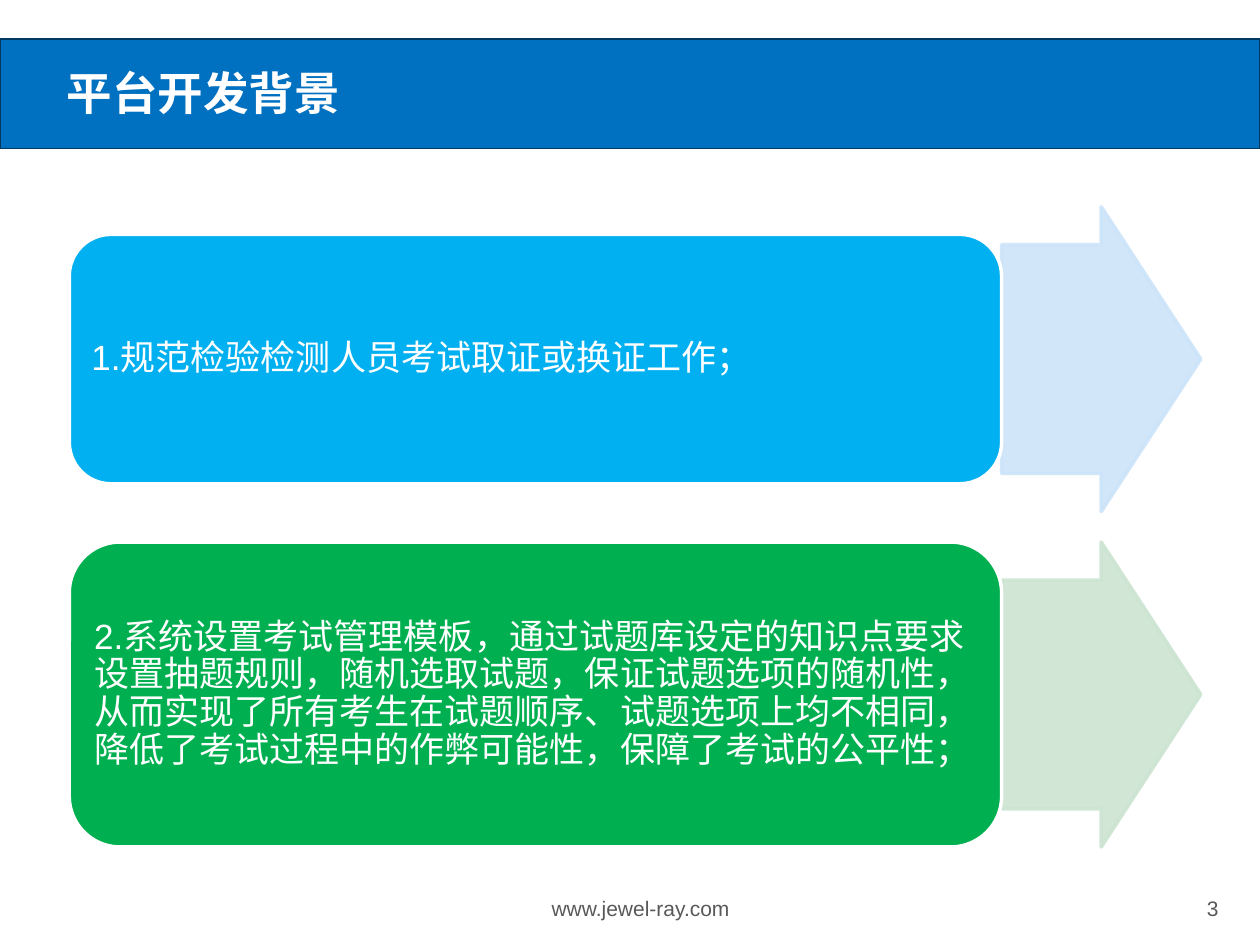
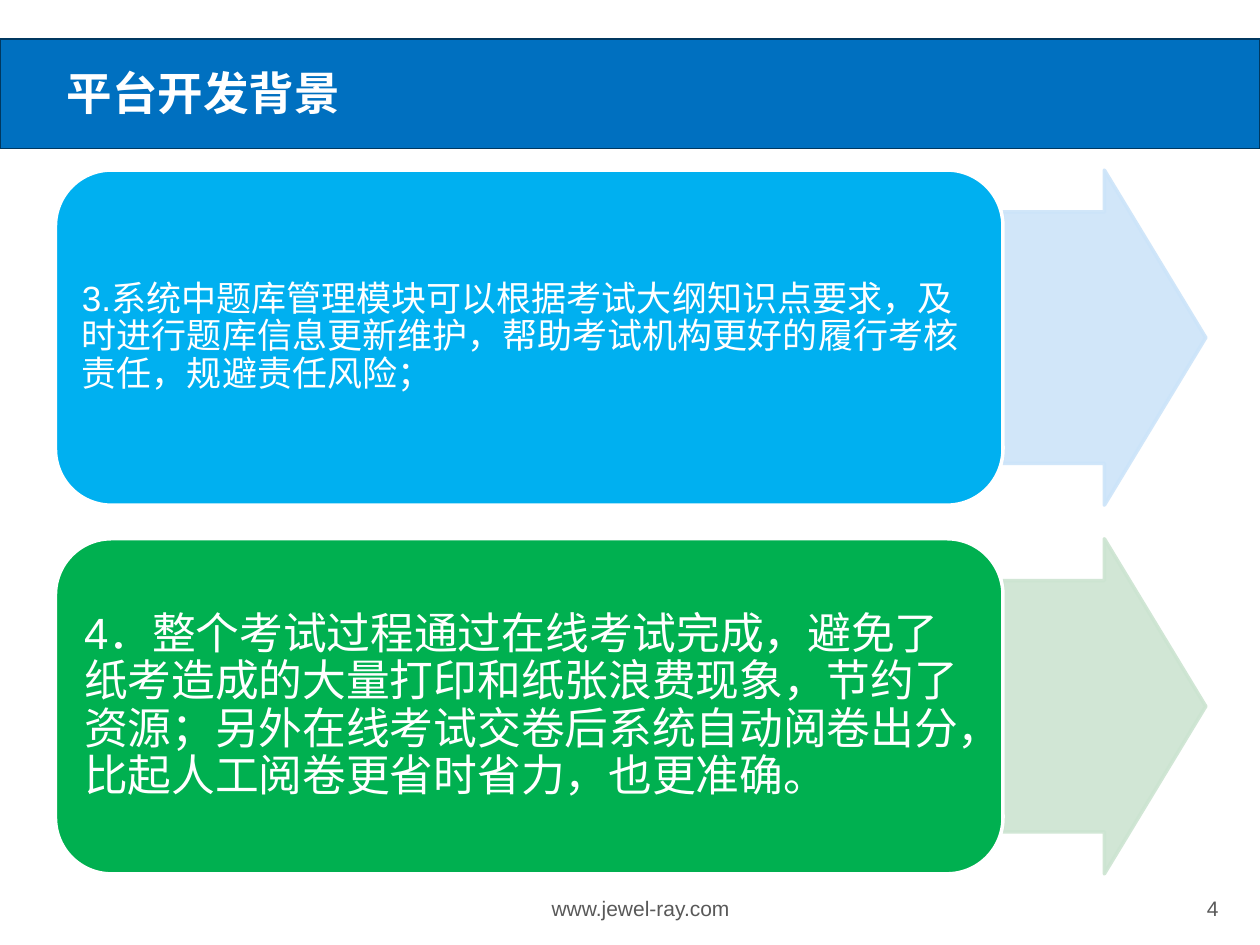
from typing import NamedTuple

from lxml import etree
from pptx import Presentation
from pptx import util as u
from pptx.dml.color import RGBColor
from pptx.enum import lang, shapes, text
from pptx.oxml import ns

# The slide is a grid of 100 columns by 75 rows of square cells.
CELL = u.Inches(0.1)
COLUMNS, ROWS = 100, 75

WHITE = RGBColor(0xFF, 0xFF, 0xFF)
BAND_BLUE = RGBColor(0x00, 0x70, 0xC0)
BAND_EDGE = RGBColor(0x00, 0x38, 0x60)
FOOTER_GREY = RGBColor(0x59, 0x59, 0x59)
CARD_BLUE = RGBColor(0x00, 0xB0, 0xF0)
CARD_GREEN = RGBColor(0x00, 0xB0, 0x50)
ARROW_BLUE = RGBColor(0xCC, 0xE4, 0xF9)
ARROW_GREEN = RGBColor(0xCC, 0xE4, 0xD1)

LATIN_FONT = "Arial"
CHINESE_FONT = "Noto Sans CJK SC"
TITLE = "平台开发背景"
WEBSITE = "www.jewel-ray.com"
FIRST_NUMBER = 3
ROW_PITCH = 1.1  # distance between rows, in row heights
ARROW_OPACITY = 90


class Frame(NamedTuple):
    left: float
    top: float
    width: float
    height: float

    def lengths(self) -> list[int]:
        return [round(cells * CELL) for cells in self]


class Point(NamedTuple):
    wording: str
    card_height: float
    size: float = 20
    inset: float = 0.08


class Page(NamedTuple):
    left: float
    top: float
    card_width: float
    arrow_width: float
    row_height: float
    points: list[Point]


BAND = Frame(0, 3.1, COLUMNS, 8.7)
TITLE_FRAME = Frame(4.3, 3.4, 91.4, 7.9)
WEBSITE_FRAME = Frame(35.2, 70.6, 31.3, 3)
NUMBER_FRAME = Frame(93, 70.5, 4.7, 3.1)
ROW_COLOURS = [(CARD_BLUE, ARROW_BLUE), (CARD_GREEN, ARROW_GREEN)]

PAGES = [
    Page(5.5, 16.4, 74, 15.8, 24.2, [
        Point("1.规范检验检测人员考试取证或换证工作；", 19.8),
        Point("2.系统设置考试管理模板，通过试题库设定的知识点要求设置抽题规则，"
              "随机选取试题，保证试题选项的随机性，从而实现了所有考生在试题顺序、"
              "试题选项上均不相同，降低了考试过程中的作弊可能性，"
              "保障了考试的公平性；", 24.2),
    ]),
    Page(4.4, 13.5, 75.2, 16.1, 26.6, [
        Point("3.系统中题库管理模块可以根据考试大纲知识点要求，"
              "及时进行题库信息更新维护，帮助考试机构更好的履行考核责任，"
              "规避责任风险；", 26.6),
        Point("4．整个考试过程通过在线考试完成，避免了纸考造成的大量打印和纸张浪费现象，"
              "节约了资源；另外在线考试交卷后系统自动阅卷出分，"
              "比起人工阅卷更省时省力，也更准确。", 26.6, size=25, inset=0.1),
    ]),
]


def add_block(slide, kind, frame: Frame, fill: RGBColor, edge: RGBColor,
              edge_width: float):
    shape = slide.shapes.add_shape(kind, *frame.lengths())
    shape.shadow.inherit = False
    shape.fill.solid()
    shape.fill.fore_color.rgb = fill
    shape.line.color.rgb = edge
    shape.line.width = u.Pt(edge_width)
    return shape


def write(shape, wording: str, size: float, colour: RGBColor, anchor,
          align=text.PP_ALIGN.LEFT, font: str = LATIN_FONT, bold: bool = False):
    """Fill the shape with one formatted paragraph and return the paragraph."""
    text_frame = shape.text_frame
    text_frame.text = wording
    text_frame.word_wrap = True
    text_frame.vertical_anchor = anchor
    paragraph = text_frame.paragraphs[0]
    paragraph.alignment = align
    for run in paragraph.runs:
        run.font.name = font
        run.font.size = u.Pt(size)
        run.font.bold = bold
        run.font.color.rgb = colour
        run.font.language_id = lang.MSO_LANGUAGE_ID.SIMPLIFIED_CHINESE
        latin = run._r.rPr.find(ns.qn("a:latin"))
        east_asian = etree.Element(ns.qn("a:ea"), typeface=CHINESE_FONT)
        latin.addnext(east_asian)
    return paragraph


def set_opacity(shape, percent: int) -> None:
    """Make every solid colour of the shape's fill and line see-through."""
    for colour in shape._element.spPr.iter(ns.qn("a:srgbClr")):
        etree.SubElement(colour, ns.qn("a:alpha"), val=str(percent * 1000))


def add_band_and_footer(slide, number: int) -> None:
    add_block(slide, shapes.MSO_SHAPE.RECTANGLE, BAND, BAND_BLUE, BAND_EDGE, 0.75)
    for frame, wording, align in (
            (WEBSITE_FRAME, WEBSITE, text.PP_ALIGN.CENTER),
            (NUMBER_FRAME, str(number), text.PP_ALIGN.RIGHT)):
        footer = slide.shapes.add_textbox(*frame.lengths())
        write(footer, wording, 12, FOOTER_GREY, text.MSO_ANCHOR.BOTTOM, align)
    title = slide.shapes.add_textbox(*TITLE_FRAME.lengths())
    write(title, TITLE, 26, WHITE, text.MSO_ANCHOR.MIDDLE,
          font=CHINESE_FONT, bold=True)


def add_arrow(slide, frame: Frame, colour: RGBColor) -> None:
    arrow = add_block(slide, shapes.MSO_SHAPE.RIGHT_ARROW, frame, colour, colour, 2)
    arrow.adjustments[0] = 0.75
    arrow.adjustments[1] = 0.5
    set_opacity(arrow, ARROW_OPACITY)


def add_card(slide, frame: Frame, colour: RGBColor, point: Point) -> None:
    card = add_block(slide, shapes.MSO_SHAPE.ROUNDED_RECTANGLE, frame, colour, WHITE, 2)
    text_frame = card.text_frame
    text_frame.margin_left = text_frame.margin_right = u.Inches(point.inset)
    text_frame.margin_top = text_frame.margin_bottom = u.Inches(point.inset / 2)
    paragraph = write(card, point.wording, point.size, WHITE, text.MSO_ANCHOR.MIDDLE)
    paragraph.line_spacing = 0.9
    paragraph.space_after = u.Pt(0.35 * point.size)


def add_points(slide, page: Page) -> None:
    """Draw one row per point: a card centred on the arrow that leaves it."""
    for row, (point, colours) in enumerate(zip(page.points, ROW_COLOURS)):
        card_colour, arrow_colour = colours
        top = page.top + row * ROW_PITCH * page.row_height
        card_top = top + (page.row_height - point.card_height) / 2
        add_arrow(slide, Frame(page.left + page.card_width, top,
                               page.arrow_width, page.row_height), arrow_colour)
        add_card(slide, Frame(page.left, card_top, page.card_width,
                              point.card_height), card_colour, point)


def main() -> None:
    presentation = Presentation()
    presentation.slide_width = COLUMNS * CELL
    presentation.slide_height = ROWS * CELL
    blank = presentation.slide_layouts[6]
    for number, page in enumerate(PAGES, FIRST_NUMBER):
        slide = presentation.slides.add_slide(blank)
        add_band_and_footer(slide, number)
        add_points(slide, page)
    presentation.save("out.pptx")


if __name__ == "__main__":
    main()
